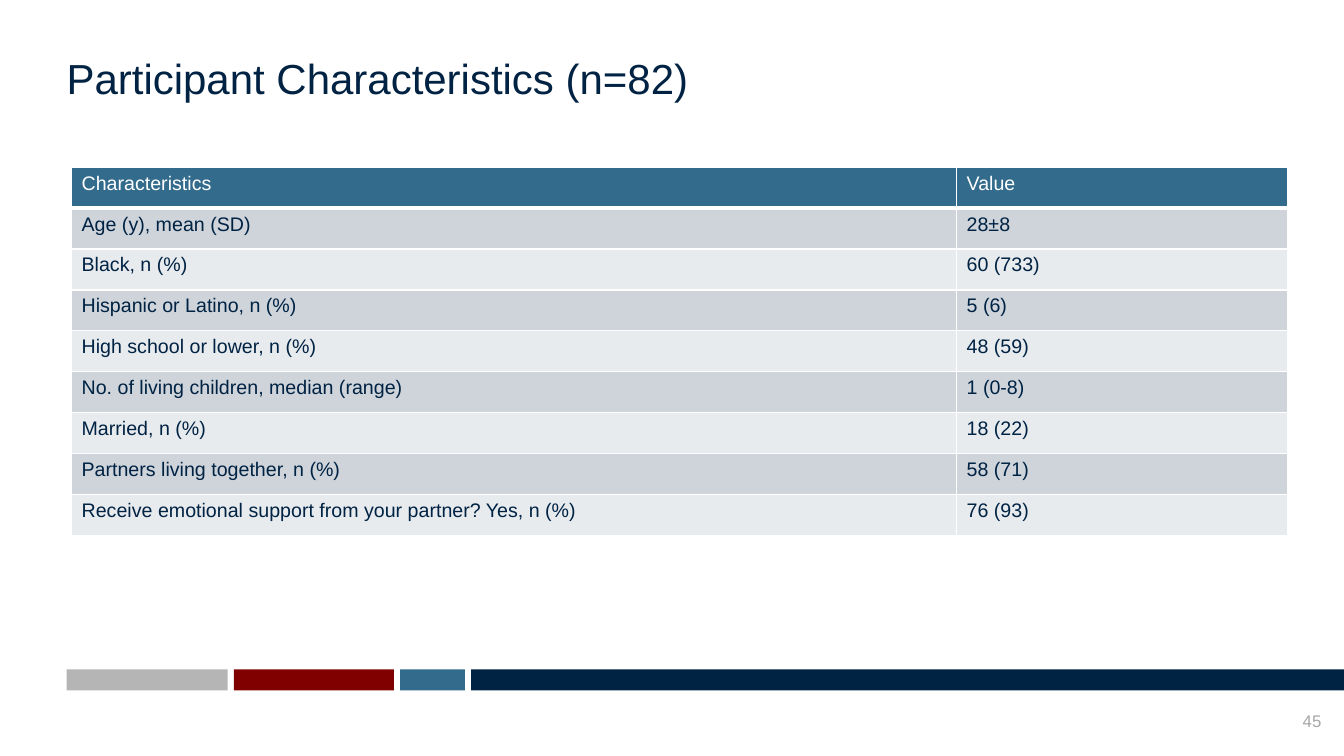
from dataclasses import dataclass

from lxml import etree
from pptx import Presentation
from pptx.dml.color import RGBColor
from pptx.enum.shapes import MSO_SHAPE
from pptx.enum.text import MSO_ANCHOR, PP_ALIGN
from pptx.oxml.ns import qn
from pptx.util import Pt

RECTANGLE = MSO_SHAPE.RECTANGLE
TOP, BOTTOM = MSO_ANCHOR.TOP, MSO_ANCHOR.BOTTOM
LEFT, RIGHT = PP_ALIGN.LEFT, PP_ALIGN.RIGHT


@dataclass(frozen=True)
class Theme:
    font: str = "Arial"
    navy: str = "002243"
    teal: str = "326B8B"
    maroon: str = "800000"
    grey: str = "B4B5B4"
    number_grey: str = "A6A6A6"
    white: str = "FFFFFF"
    bands: tuple = ("CED4DA", "E8EBEE")
    title_size: int = 30
    table_size: int = 14
    number_size: int = 12


THEME = Theme()
PAGE_WIDTH, PAGE_HEIGHT = 960, 540
MARGIN = 47.6
BAR_GAP = 4.5
BARS = [(THEME.grey, 115), (THEME.maroon, 114.3), (THEME.teal, 46.2)]
COLUMN_WIDTHS = (632.2, 236.2)
ROW_HEIGHT = 29.2
CHARACTERISTICS = [
    ("Characteristics", "Value"),
    ("Age (y), mean (SD)", "28±8"),
    ("Black, n (%)", "60 (733)"),
    ("Hispanic or Latino, n (%)", "5 (6)"),
    ("High school or lower, n (%)", "48 (59)"),
    ("No. of living children, median (range)", "1 (0-8)"),
    ("Married, n (%)", "18 (22)"),
    ("Partners living together, n (%)", "58 (71)"),
    ("Receive emotional support from your partner? Yes, n (%)", "76 (93)"),
]


def write(frame, text, size, color, align=LEFT):
    para = frame.paragraphs[0]
    para.alignment = align
    span = para.add_run()
    span.text = text
    for name, value in {"name": THEME.font, "size": Pt(size)}.items():
        setattr(span.font, name, value)
    span.font.color.rgb = RGBColor.from_string(color)


def add_text(page, place, text, size, color, align=LEFT, anchor=TOP):
    box = page.shapes.add_textbox(*map(Pt, place))
    frame = box.text_frame
    layout = {"word_wrap": True, "vertical_anchor": anchor, "margin_left": 0,
              "margin_top": 0, "margin_right": 0, "margin_bottom": 0}
    for name, value in layout.items():
        setattr(frame, name, value)
    write(frame, text, size, color, align)


def add_bar(page, left, width, color):
    bar = page.shapes.add_shape(RECTANGLE, Pt(left), Pt(478.1), Pt(width), Pt(15.1))
    bar.shadow.inherit = False
    bar.fill.solid()
    bar.fill.fore_color.rgb = RGBColor.from_string(color)
    bar.line.fill.background()


def add_footer_bars(page):
    """Lay the bars left to right; the navy one runs to the page edge."""
    left = MARGIN
    for color, width in BARS:
        add_bar(page, left, width, color)
        left += width + BAR_GAP
    add_bar(page, left, PAGE_WIDTH - left, THEME.navy)


def set_borders(cell, bottom_width):
    properties = cell._tc.get_or_add_tcPr()
    widths = {"a:lnL": 1, "a:lnR": 1, "a:lnT": 1, "a:lnB": bottom_width}
    for side, width in widths.items():
        line = etree.SubElement(properties, qn(side), w=str(Pt(width)))
        fill = etree.SubElement(line, qn("a:solidFill"))
        etree.SubElement(fill, qn("a:srgbClr"), val=THEME.white)


def add_table(page, rows):
    width, height = sum(COLUMN_WIDTHS), ROW_HEIGHT * len(rows)
    table = page.shapes.add_table(len(rows), len(COLUMN_WIDTHS), Pt(51.1), Pt(119.5),
                                  Pt(width), Pt(height)).table
    for column, column_width in zip(table.columns, COLUMN_WIDTHS):
        column.width = Pt(column_width)
    for row_index, row in enumerate(rows):
        header = row_index == 0
        table.rows[row_index].height = Pt(ROW_HEIGHT)
        fill = THEME.teal if header else THEME.bands[(row_index - 1) % 2]
        for column_index, text in enumerate(row):
            cell = table.cell(row_index, column_index)
            set_borders(cell, 3 if header else 1)
            cell.fill.solid()
            cell.fill.fore_color.rgb = RGBColor.from_string(fill)
            write(cell.text_frame, text, THEME.table_size,
                  THEME.white if header else THEME.navy)
            cell.text_frame.paragraphs[0].runs[0].font.bold = False


def main():
    deck = Presentation()
    deck.slide_width, deck.slide_height = Pt(PAGE_WIDTH), Pt(PAGE_HEIGHT)
    page = deck.slides.add_slide(deck.slide_layouts[6])
    add_footer_bars(page)
    add_text(page, (MARGIN, 37.4, 872, 36), "Participant Characteristics (n=82)",
             THEME.title_size, THEME.navy)
    add_table(page, CHARACTERISTICS)
    add_text(page, (919.4, 507.6, 24.5, 14.4), "45", THEME.number_size,
             THEME.number_grey, RIGHT, BOTTOM)
    deck.save("out.pptx")


if __name__ == "__main__":
    main()
